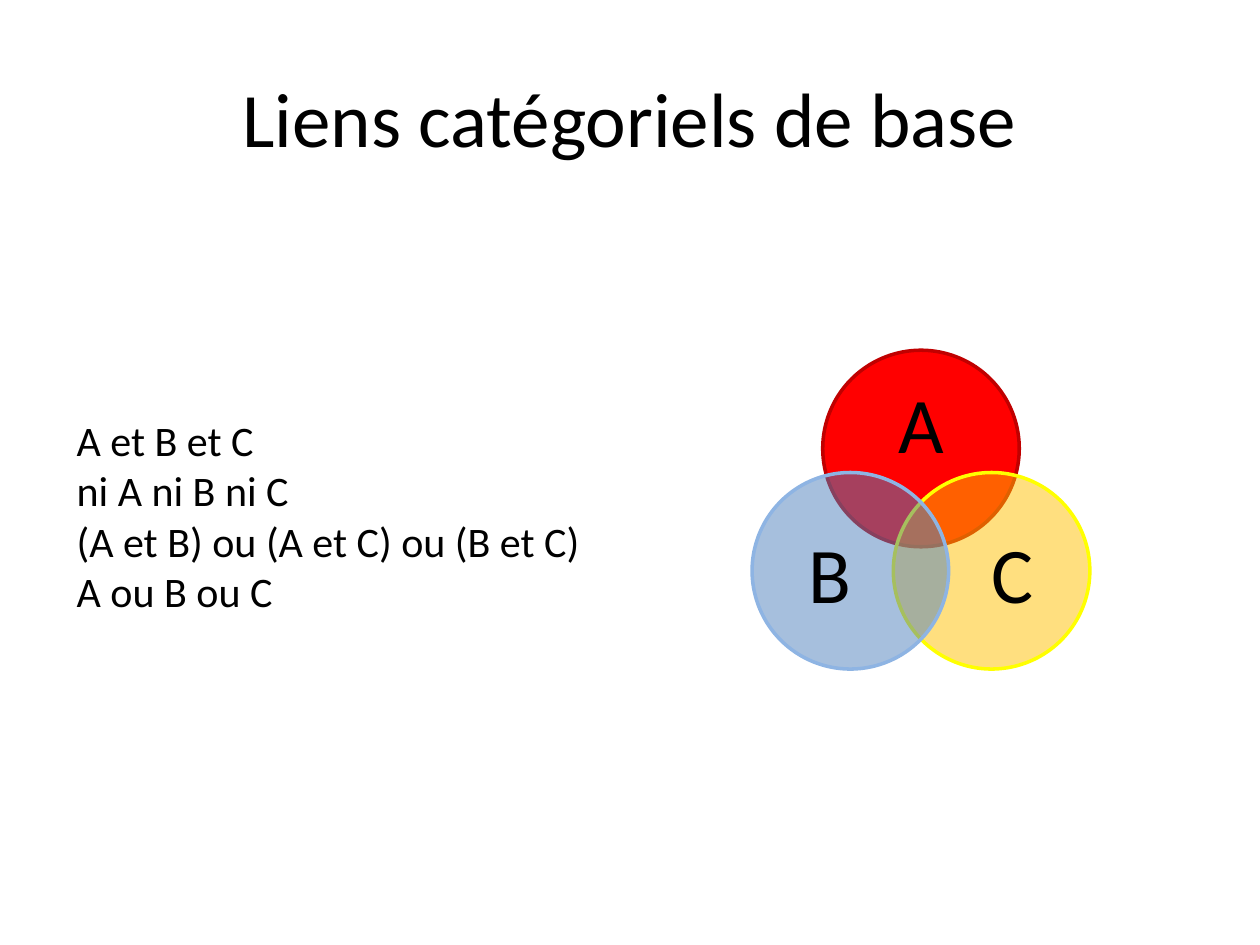
from math import sqrt

from lxml import etree
from pptx import Presentation
from pptx.dml.color import RGBColor
from pptx.enum.shapes import MSO_SHAPE
from pptx.enum.text import MSO_ANCHOR, PP_ALIGN
from pptx.oxml.ns import qn
from pptx.util import Pt

OVAL = MSO_SHAPE.OVAL
MIDDLE, TOP = MSO_ANCHOR.MIDDLE, MSO_ANCHOR.TOP
CENTER, LEFT = PP_ALIGN.CENTER, PP_ALIGN.LEFT

BLACK = RGBColor(0x00, 0x00, 0x00)
RED = RGBColor(0xFF, 0x00, 0x00)
DARK_RED = RGBColor(0xC0, 0x00, 0x00)
AMBER = RGBColor(0xFF, 0xC0, 0x00)
YELLOW = RGBColor(0xFF, 0xFF, 0x00)
BLUE = RGBColor(0x4F, 0x81, 0xBD)
LIGHT_BLUE = RGBColor(0x8E, 0xB4, 0xE3)

DIAMETER = 112.3
SPACING = 80.7
APEX_X, APEX_Y = 526.3, 256.3
BASE_Y = APEX_Y + SPACING * sqrt(3) / 2


class SlideBuilder:
    font = "Calibri"
    outline = 2

    def __init__(self, slide):
        self.slide = slide

    def text(self, box, lines, size, align=CENTER, anchor=MIDDLE,
             margins=(7.2, 3.6), wrap=True, line_spacing=None):
        frame = self.slide.shapes.add_textbox(*map(Pt, box)).text_frame
        frame.word_wrap = wrap
        frame.vertical_anchor = anchor
        frame.margin_left = frame.margin_right = Pt(margins[0])
        frame.margin_top = frame.margin_bottom = Pt(margins[1])
        frame.text = "\n".join(lines)
        for paragraph in frame.paragraphs:
            paragraph.alignment = align
            paragraph.line_spacing = line_spacing
            for run in paragraph.runs:
                run.font.name = self.font
                run.font.size = Pt(size)
                run.font.color.rgb = BLACK

    def circle(self, center_x, center_y, fill, line, opacity):
        radius = DIAMETER / 2
        circle = self.slide.shapes.add_shape(
            OVAL, Pt(center_x - radius), Pt(center_y - radius),
            Pt(DIAMETER), Pt(DIAMETER))
        circle.shadow.inherit = False
        circle.fill.solid()
        circle.fill.fore_color.rgb = fill
        circle.line.color.rgb = line
        circle.line.width = Pt(self.outline)
        if opacity < 100:
            color = circle.fill._xPr.find(qn("a:solidFill"))[0]
            etree.SubElement(color, qn("a:alpha")).set("val", str(opacity * 1000))

    def venn_set(self, letter, center, fill, line, opacity, label_box):
        self.circle(*center, fill, line, opacity)
        self.text(label_box, [letter], 45, margins=(0, 0), line_spacing=0.9)


def main():
    deck = Presentation()
    deck.slide_width, deck.slide_height = Pt(720), Pt(540)
    builder = SlideBuilder(deck.slides.add_slide(deck.slide_layouts[6]))

    builder.text((36, 21.6, 648, 90), ["Liens catégoriels de base"], 44)

    venn_sets = [
        ("A", (APEX_X, APEX_Y), RED, DARK_RED, 100, (485.3, 219.6, 82, 50.4)),
        ("C", (APEX_X + SPACING / 2, BASE_Y), AMBER, YELLOW, 50,
         (545, 299.5, 67.7, 62)),
        ("B", (APEX_X - SPACING / 2, BASE_Y), BLUE, LIGHT_BLUE, 50,
         (440.6, 299.5, 67.7, 62)),
    ]
    for venn_set in venn_sets:
        builder.venn_set(*venn_set)

    links = [
        "A et B et C",
        "ni A ni B ni C",
        "(A et B) ou (A et C) ou (B et C)",
        "A ou B ou C",
    ]
    builder.text((36.7, 233.3, 303.8, 145.4), links, 24,
                 align=LEFT, anchor=TOP, wrap=False)

    deck.save("out.pptx")


if __name__ == "__main__":
    main()
